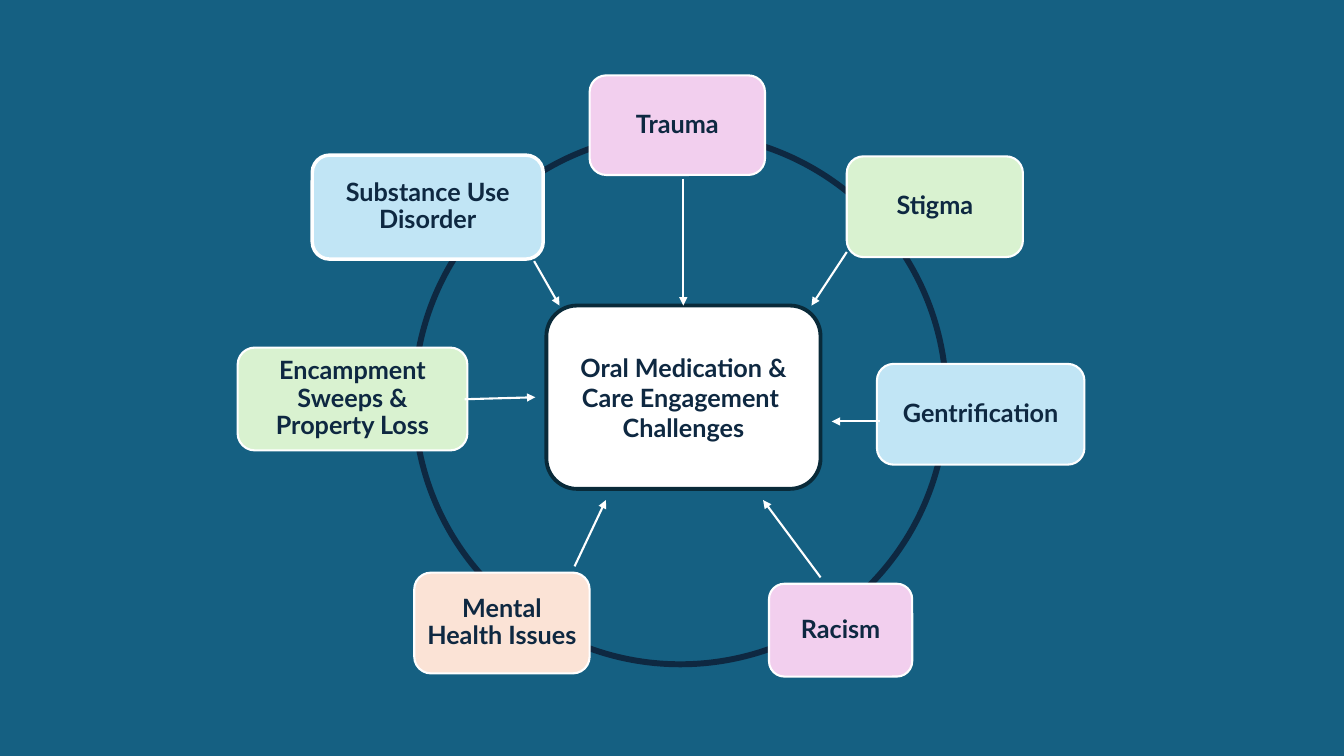
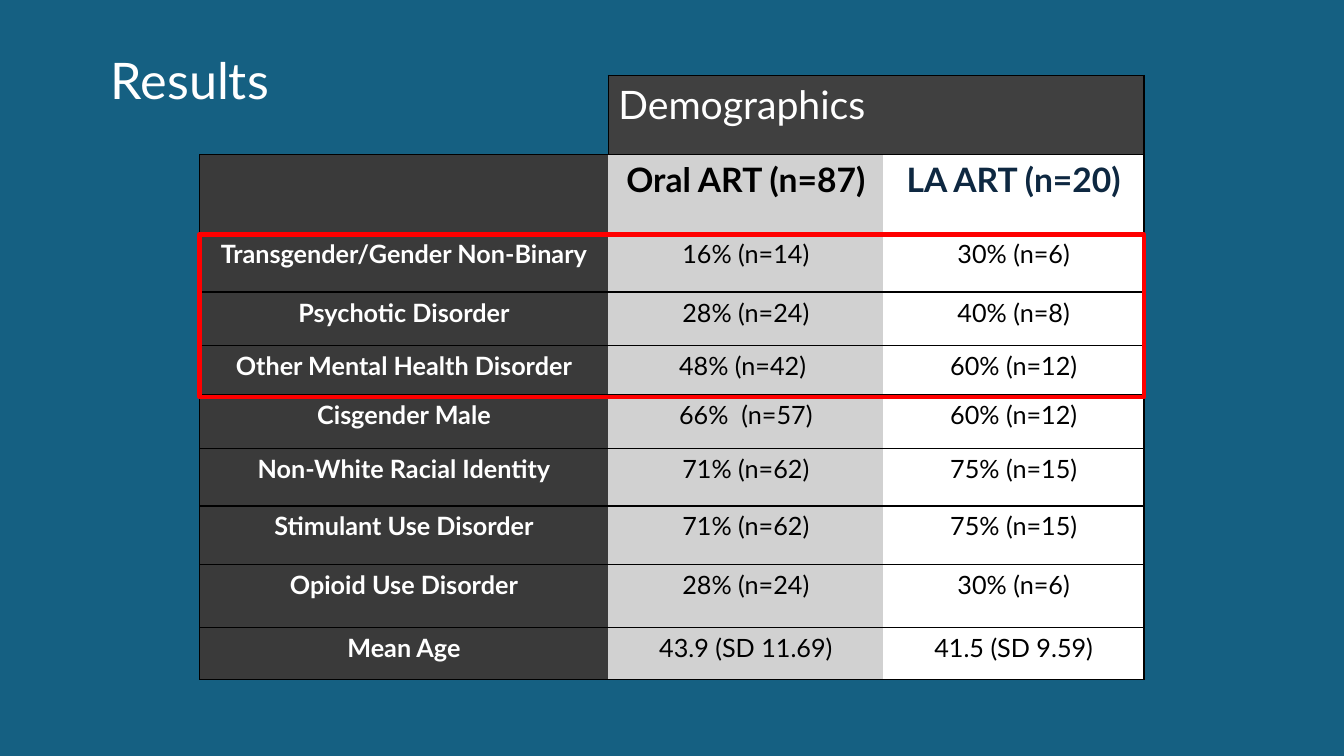
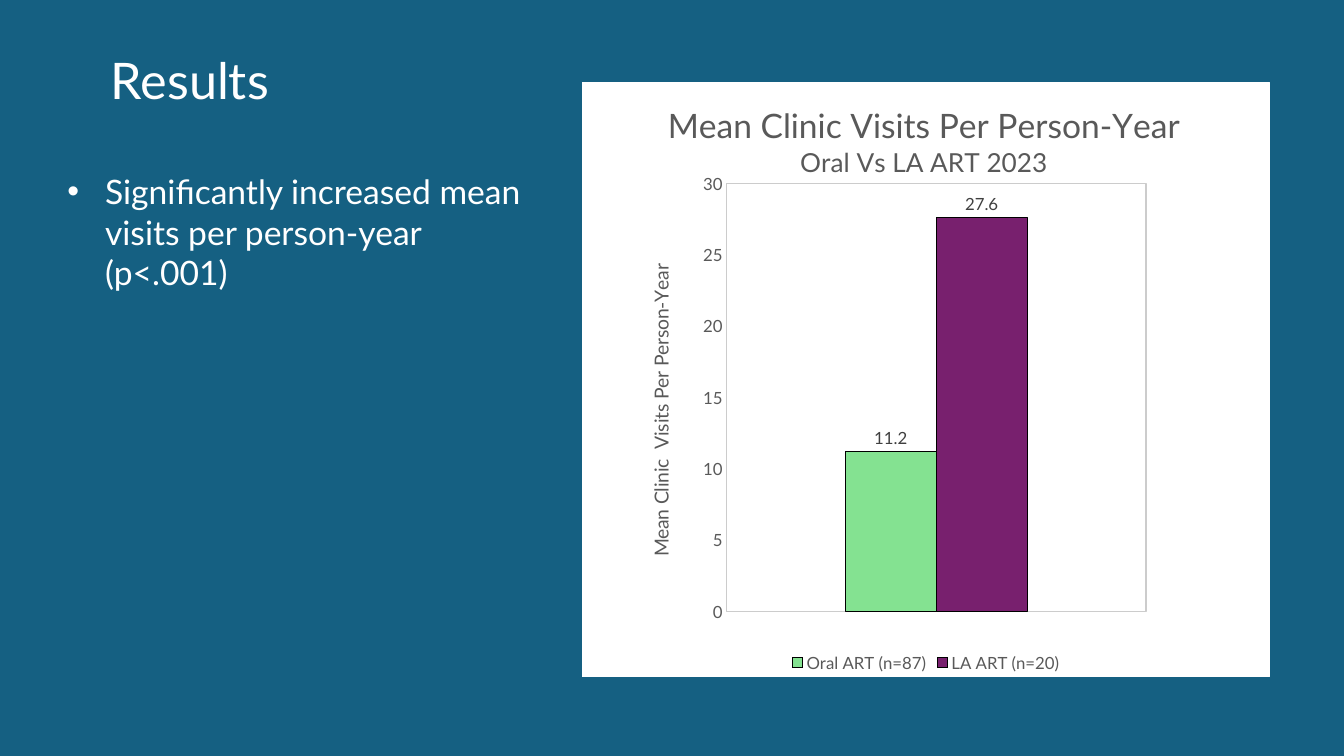
from lxml import etree
from pptx import Presentation
from pptx.chart.data import CategoryChartData
from pptx.dml.color import RGBColor
from pptx.enum.chart import XL_CHART_TYPE, XL_LABEL_POSITION, XL_LEGEND_POSITION, XL_TICK_MARK
from pptx.enum.shapes import MSO_CONNECTOR, MSO_SHAPE
from pptx.enum.text import MSO_ANCHOR, PP_ALIGN
from pptx.oxml import parse_xml
from pptx.oxml.ns import nsdecls, qn
from pptx.util import Cm, Pt

CENTER = PP_ALIGN.CENTER
MIDDLE = MSO_ANCHOR.MIDDLE
OVAL, RECTANGLE, ROUNDED = MSO_SHAPE.OVAL, MSO_SHAPE.RECTANGLE, MSO_SHAPE.ROUNDED_RECTANGLE
STRAIGHT = MSO_CONNECTOR.STRAIGHT
COLUMNS = XL_CHART_TYPE.COLUMN_CLUSTERED
OUTSIDE_END = XL_LABEL_POSITION.OUTSIDE_END
BOTTOM = XL_LEGEND_POSITION.BOTTOM
NO_TICK = XL_TICK_MARK.NONE

FONT = "Lato"
NO_GRID_STYLE = "{2D5ABB26-0587-4C30-8999-92F81FD0307C}"
COLORS = {
    "background": "156082", "navy": "0E2841", "white": "FFFFFF", "black": "000000",
    "center_line": "092A39", "pink": "F2CFEE", "green": "D9F2D0", "blue": "C1E5F5",
    "peach": "FBE3D6", "banner": "404040", "row_head": "3A3A3A", "oral": "D1D1D1",
    "highlight": "FF0000", "chart_text": "595959", "label": "404040", "frame": "CCCCCC",
    "oral_bar": "84E291", "la_bar": "78206E",
}

# label, box (left, top, width, height), fill, line width, arrow (from x, y, to x, y)
FACTORS = [
    ("Trauma", (14.86, 1.9, 4.42, 2.51), "pink", 1.5, (17.22, 4.5, 17.22, 7.7)),
    ("Stigma", (21.34, 3.94, 4.44, 2.54), "green", 1.5, (21.34, 6.35, 20.45, 7.7)),
    ("Gentrification", (22.1, 9.17, 5.23, 2.54), "blue", 1.5, (22.17, 10.62, 20.96, 10.62)),
    ("Racism", (19.38, 14.71, 3.61, 2.34), "pink", 1.5, (20.68, 14.55, 19.23, 12.6)),
    ("Mental Health Issues", (10.44, 14.43, 4.42, 2.54), "peach", 1.5,
     (14.48, 14.27, 15.27, 12.6)),
    ("Encampment Sweeps & Property Loss", (5.99, 8.76, 5.79, 2.59), "green", 1.5,
     (11.71, 10.06, 13.49, 10.01)),
    ("Substance Use Disorder", (7.87, 3.91, 5.82, 2.62), "blue", 2.5,
     (13.46, 6.58, 14.1, 7.7)),
]

DEMOGRAPHICS = [
    ("", "Demographics", ""),
    ("", "Oral ART (n=87)", "LA ART (n=20)"),
    ("Transgender/Gender Non-Binary", "16% (n=14)", "30% (n=6)"),
    ("Psychotic Disorder", "28% (n=24)", "40% (n=8)"),
    ("Other Mental Health Disorder", "48% (n=42) ", "60% (n=12)"),
    ("Cisgender Male", "66%  (n=57)", "60% (n=12)"),
    ("Non-White Racial Identity", "71% (n=62)", "75% (n=15)"),
    ("Stimulant Use Disorder", "71% (n=62)", "75% (n=15)"),
    ("Opioid Use Disorder", "28% (n=24)", "30% (n=6)"),
    ("Mean Age", "43.9 (SD 11.69)", "41.5 (SD 9.59)"),
]
COLUMN_WIDTHS = [10.3, 6.93, 6.57]
ROW_HEIGHTS = [2, 1.98, 1.48, 1.35, 1.24, 1.35, 1.45, 1.47, 1.6, 1.3]
HIGHLIGHTED_ROWS = slice(2, 5)


def rgb(name):
    return RGBColor.from_string(COLORS[name])


def lengths(values):
    return [Cm(value) for value in values]


def style_font(font, size, color, bold=False):
    font.name, font.size, font.bold = FONT, Pt(size), bold
    font.color.rgb = rgb(color)


def set_text(text_frame, text, size, color, bold=False, align=None):
    text_frame.word_wrap = True
    text_frame.text = text
    for paragraph in text_frame.paragraphs:
        paragraph.alignment = align
        for run in paragraph.runs:
            style_font(run.font, size, color, bold)


def new_slide(presentation):
    slide = presentation.slides.add_slide(presentation.slide_layouts[6])
    slide.background.fill.solid()
    slide.background.fill.fore_color.rgb = rgb("background")
    return slide


def add_title(slide, text):
    title = slide.shapes.add_textbox(*lengths((2.54, 1.12, 16.94, 1.8)))
    set_text(title.text_frame, text, 36, "white")


def add_outlined(slide, kind, box, fill, line, line_width):
    shape = slide.shapes.add_shape(kind, *lengths(box))
    shape.shadow.inherit = False
    if fill:
        shape.fill.solid()
        shape.fill.fore_color.rgb = rgb(fill)
    else:
        shape.fill.background()
    shape.line.color.rgb = rgb(line)
    shape.line.width = Pt(line_width)
    return shape


def add_arrow(slide, ends):
    arrow = slide.shapes.add_connector(STRAIGHT, *lengths(ends))
    arrow.line.color.rgb = rgb("white")
    arrow.line.width = Pt(1.5)
    properties = arrow._element.spPr
    etree.SubElement(properties.find(qn("a:ln")), qn("a:tailEnd"), type="triangle")
    etree.SubElement(properties, qn("a:effectLst"))


def add_factor(slide, label, box, fill, line_width):
    factor = add_outlined(slide, ROUNDED, box, fill, "white", line_width)
    frame = factor.text_frame
    frame.margin_left = frame.margin_right = frame.margin_top = frame.margin_bottom = Cm(0.18)
    frame.vertical_anchor = MIDDLE
    set_text(frame, label, 18, "navy", True, CENTER)
    frame.paragraphs[0].line_spacing = 0.9


def build_challenges(presentation):
    slide = new_slide(presentation)
    add_outlined(slide, OVAL, (10.44, 3.35, 13.41, 13.39), None, "navy", 4.25)
    center = add_outlined(slide, ROUNDED, (13.77, 7.7, 6.91, 4.62), "white", "center_line", 2.75)
    center.text_frame.vertical_anchor = MIDDLE
    set_text(center.text_frame, "Oral Medication & Care Engagement  Challenges",
             18, "navy", True, CENTER)
    for label, box, fill, line_width, arrow_ends in FACTORS:
        add_factor(slide, label, box, fill, line_width)
        add_arrow(slide, arrow_ends)


def set_borders(cell, sides):
    """Draw black 1 pt borders; sides are letters out of LRTB."""
    properties = cell._tc.get_or_add_tcPr()
    lines = [
        f'<a:ln{side} {nsdecls("a")} w="12700"><a:solidFill>'
        f'<a:srgbClr val="{COLORS["black"]}"/></a:solidFill></a:ln{side}>'
        for side in "LRTB" if side in sides
    ]
    for position, line in enumerate(lines):
        properties.insert(position, parse_xml(line))


def cell_style(row, column):
    """Return fill, text size, text colour, bold, alignment and borders."""
    if row == 0:
        if column == 0:
            return None, 18, "white", False, None, "RB"
        return "banner", 28, "white", False, None, "LRTB"
    if column == 0:
        return "row_head", 18, "white", True, CENTER, "LTB"
    fill, borders = ("oral", "TB") if column == 1 else ("white", "RTB")
    if row == 1:
        return fill, 24, "black" if column == 1 else "navy", True, CENTER, borders
    return fill, 18, "black", False, CENTER, borders


def add_demographics(slide, left, top):
    box = (left, top, sum(COLUMN_WIDTHS), sum(ROW_HEIGHTS))
    table = slide.shapes.add_table(len(DEMOGRAPHICS), len(COLUMN_WIDTHS), *lengths(box)).table
    table.first_row = table.horz_banding = False
    table._tbl.tblPr.find(qn("a:tableStyleId")).text = NO_GRID_STYLE
    for column, width in zip(table.columns, COLUMN_WIDTHS):
        column.width = Cm(width)
    for row, height in zip(table.rows, ROW_HEIGHTS):
        row.height = Cm(height)
    table.cell(0, 1).merge(table.cell(0, 2))
    for row, texts in enumerate(DEMOGRAPHICS):
        for column, text in enumerate(texts):
            cell = table.cell(row, column)
            fill, size, color, bold, align, borders = cell_style(row, column)
            if text:
                set_text(cell.text_frame, text, size, color, bold, align)
            if fill:
                cell.fill.solid()
                cell.fill.fore_color.rgb = rgb(fill)
            else:
                cell.fill.background()
            set_borders(cell, borders)
    highlight_top = top + sum(ROW_HEIGHTS[:HIGHLIGHTED_ROWS.start]) + 0.03
    highlight_box = (left, highlight_top, box[2], sum(ROW_HEIGHTS[HIGHLIGHTED_ROWS]) + 0.03)
    add_outlined(slide, RECTANGLE, highlight_box, None, "highlight", 3)


def build_demographics(presentation):
    slide = new_slide(presentation)
    add_title(slide, "Results")
    add_demographics(slide, 5.03, 1.9)


def set_layout(element, before, x, y, size=None):
    """Place a chart part by fractions of the chart, ahead of the child named in before."""
    for old in element.findall(qn("c:layout")):
        element.remove(old)
    values = {"xMode": "edge", "yMode": "edge", "x": x, "y": y}
    if size:
        values = {"layoutTarget": "inner", **values, "w": size[0], "h": size[1]}
    parts = "".join(f'<c:{name} val="{value}"/>' for name, value in values.items())
    layout = parse_xml(
        f'<c:layout {nsdecls("c")}><c:manualLayout>{parts}</c:manualLayout></c:layout>')
    element.find(qn(before)).addprevious(layout)


def shape_properties(fill, line, width):
    inside = f'<a:solidFill><a:srgbClr val="{COLORS[fill]}"/></a:solidFill>'
    outline = f'<a:solidFill><a:srgbClr val="{COLORS[line]}"/></a:solidFill>'
    return parse_xml(f'<c:spPr {nsdecls("c", "a")}>{inside}'
                     f'<a:ln w="{Pt(width)}">{outline}</a:ln></c:spPr>')


def style_titles(chart):
    chart.has_title = True
    frame = chart.chart_title.text_frame
    frame.text = "Mean Clinic Visits Per Person-Year\nOral Vs LA ART 2023"
    for paragraph, size in zip(frame.paragraphs, (24, 18.7)):
        style_font(paragraph.runs[0].font, size, "chart_text")
    chart.chart_title.include_in_layout = False
    set_layout(chart.chart_title._element, "c:overlay", 0.12, 0.03)

    axis_title = chart.value_axis.axis_title
    axis_title.text_frame.text = "Mean Clinic  Visits Per Person-Year"
    style_font(axis_title.text_frame.paragraphs[0].runs[0].font, 13.8, "chart_text")
    body = axis_title.text_frame._txBody.find(qn("a:bodyPr"))
    body.set("rot", "-5400000")
    body.set("vert", "horz")
    set_layout(axis_title._element, "c:overlay", 0.09, 0.3)


def style_axes(chart):
    chart.category_axis.visible = False
    axis = chart.value_axis
    axis.minimum_scale, axis.maximum_scale, axis.major_unit = 0, 30, 5
    axis.has_major_gridlines = False
    axis.major_tick_mark = axis.minor_tick_mark = NO_TICK
    axis.format.line.fill.background()
    style_font(axis.tick_labels.font, 12, "chart_text")


def style_bars(plot):
    plot.gap_width, plot.overlap, plot.vary_by_categories = 261, 0, False
    for series, color in zip(plot.series, ("oral_bar", "la_bar")):
        series.format.fill.solid()
        series.format.fill.fore_color.rgb = rgb(color)
        series.format.line.color.rgb = rgb("black")
        series.format.line.width = Pt(0.75)
        labels = series.data_labels
        labels.show_value = True
        labels.position = OUTSIDE_END
        style_font(labels.font, 12, "label")


def add_visits_chart(slide, box):
    data = CategoryChartData()
    data.categories = ["1"]
    data.add_series("Oral ART (n=87)", [11.2])
    data.add_series("LA ART (n=20)", [27.6])
    chart = slide.shapes.add_chart(COLUMNS, *lengths(box), data).chart
    style_font(chart.font, 10, "black")
    style_titles(chart)
    style_axes(chart)
    style_bars(chart.plots[0])
    chart.has_legend = True
    chart.legend.position = BOTTOM
    chart.legend.include_in_layout = False
    style_font(chart.legend.font, 12, "chart_text")

    plot_area = chart._chartSpace.chart.plotArea
    set_layout(plot_area, "c:barChart", 0.21, 0.17, (0.61, 0.72))
    plot_area.append(shape_properties("white", "frame", 1))
    chart._chartSpace.chart.addnext(shape_properties("white", "white", 0.75))


def add_bullet(slide, box, text):
    textbox = slide.shapes.add_textbox(*lengths(box))
    set_text(textbox.text_frame, text, 24, "white")
    properties = textbox.text_frame.paragraphs[0]._p.get_or_add_pPr()
    properties.set("marL", str(Cm(0.95)))
    properties.set("indent", str(-Cm(0.95)))
    etree.SubElement(properties, qn("a:buFont"), typeface="Arial")
    etree.SubElement(properties, qn("a:buChar"), char="•")


def build_visits(presentation):
    slide = new_slide(presentation)
    add_title(slide, "Results")
    add_visits_chart(slide, (14.66, 2.06, 17.35, 15.01))
    add_bullet(slide, (1.45, 4.19, 12.57, 2.31),
               "Significantly increased mean visits per person-year (p<.001)")


def main():
    presentation = Presentation()
    presentation.slide_width, presentation.slide_height = Cm(33.87), Cm(19.05)
    build_challenges(presentation)
    build_demographics(presentation)
    build_visits(presentation)
    presentation.save("out.pptx")


if __name__ == "__main__":
    main()
